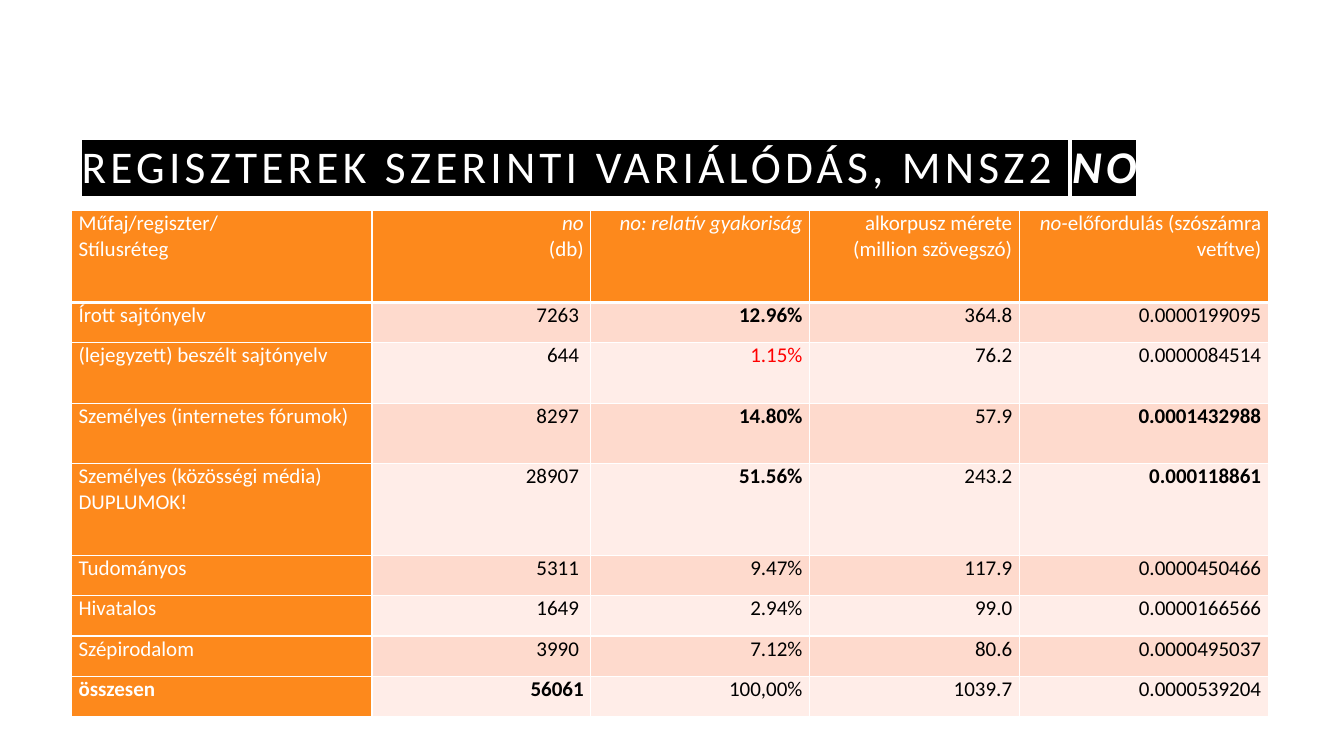
from lxml import etree
from pptx import Presentation
from pptx.dml.color import RGBColor
from pptx.enum.text import MSO_ANCHOR, MSO_AUTO_SIZE, PP_ALIGN
from pptx.oxml.ns import qn
from pptx.util import Pt

PX = 9144
FONT = "Calibri"
WHITE = RGBColor(0xFF, 0xFF, 0xFF)
BLACK = RGBColor(0x00, 0x00, 0x00)
RED = RGBColor(0xFF, 0x00, 0x00)
ORANGE = RGBColor(0xFD, 0x89, 0x1C)
BANDS = RGBColor(0xFF, 0xED, 0xE8), RGBColor(0xFE, 0xDA, 0xCD)
LEFT, RIGHT = PP_ALIGN.LEFT, PP_ALIGN.RIGHT
BOTTOM, NO_FIT = MSO_ANCHOR.BOTTOM, MSO_AUTO_SIZE.NONE
NBSP = chr(160)

TITLE_BOX = 71, 71, 1162, 125
TABLE_BOX = 71, 209, 1187, 502
COLS = 298, 217, 217, 208, 247
ROWS = 91, 40, 60, 60, 91, 40, 40, 40, 40
DATA = [
    ["Műfaj/regiszter/\nStílusréteg", "*no*\n(db)", "*no: relatív gyakoriság*",
     "alkorpusz mérete (million szövegszó)",
     "*no-*előfordulás (szószámra vetítve)"],
    ["Írott sajtónyelv", "7263" + NBSP, "12.96%", "364.8", "0.0000199095"],
    ["(lejegyzett) beszélt sajtónyelv", "644" + NBSP, "1.15%", "76.2", "0.0000084514"],
    ["Személyes (internetes fórumok)", "8297" + NBSP, "14.80%", "57.9", "0.0001432988"],
    ["Személyes (közösségi média) DUPLUMOK!", "28907" + NBSP, "51.56%", "243.2",
     "0.000118861"],
    ["Tudományos", "5311" + NBSP, "9.47%", "117.9", "0.0000450466"],
    ["Hivatalos", "1649" + NBSP, "2.94%", "99.0", "0.0000166566"],
    ["Szépirodalom", "3990" + NBSP, "7.12%", "80.6", "0.0000495037"],
    ["összesen", "56061", "100,00%", "1039.7", "0.0000539204"],
]
BOLD_CELLS = {(1, 2), (3, 2), (3, 4), (4, 2), (4, 4), (8, 0), (8, 1)}
RED_CELLS = {(2, 2)}


def set_attrs(obj, values):
    """Set each attribute named in a dict of values."""
    for name, value in values.items():
        setattr(obj, name, value)


def add_run(p, text, size, color, bold=False, italic=False):
    """Add a formatted run to a paragraph and return it."""
    r = p.add_run()
    r.text = text
    set_attrs(r.font, {"name": FONT, "size": Pt(size), "bold": bold, "italic": italic})
    r.font.color.rgb = color
    return r


def add_color(parent, color):
    """Add an RGB colour element to an XML parent."""
    etree.SubElement(parent, qn("a:srgbClr"), val=str(color))


def highlight(r, color):
    """Space out a run and put a highlight colour behind it."""
    rPr = r.font._element
    rPr.set("spc", "300")
    mark = etree.Element(qn("a:highlight"))
    add_color(mark, color)
    rPr.find(qn("a:solidFill")).addnext(mark)


def add_borders(cell, bottom):
    """Draw white borders round a cell."""
    tcPr = cell._tc.get_or_add_tcPr()
    for i, (side, width) in enumerate(zip("LRTB", (1, 1, 1, bottom))):
        ln = etree.Element(qn("a:ln" + side), w=str(Pt(width)))
        add_color(etree.SubElement(ln, qn("a:solidFill")), WHITE)
        tcPr.insert(i, ln)


def add_title(s, box):
    """Place the highlighted title in its placeholder."""
    sp = s.shapes.title
    set_attrs(sp, dict(zip(("left", "top", "width", "height"), (v * PX for v in box))))
    tf = sp.text_frame
    set_attrs(tf, {"word_wrap": True, "auto_size": NO_FIT, "vertical_anchor": BOTTOM})
    p = tf.paragraphs[0]
    set_attrs(p, {"alignment": LEFT, "line_spacing": 1.2})
    for text, strong in (("REGISZTEREK SZERINTI VARIÁLÓDÁS, MNSZ2 ", False), ("NO", True)):
        highlight(add_run(p, text, 32.4, WHITE, strong, strong), BLACK)


def fill_cell(cell, text, row, col):
    """Write and format one cell; asterisks enclose italics."""
    set_attrs(cell, {"margin_left": 7 * PX, "margin_right": 7 * PX,
                     "margin_top": 0, "margin_bottom": 0})
    heading = row == 0 or col == 0
    cell.fill.solid()
    cell.fill.fore_color.rgb = ORANGE if heading else BANDS[row % 2]
    color = WHITE if heading else RED if (row, col) in RED_CELLS else BLACK
    tf = cell.text_frame
    for i, line in enumerate(text.split("\n")):
        p = tf.add_paragraph() if i else tf.paragraphs[0]
        p.alignment = RIGHT if col else LEFT
        for j, part in enumerate(line.split("*")):
            if part:
                add_run(p, part, 15, color, (row, col) in BOLD_CELLS, j % 2 == 1)
    add_borders(cell, 1 if row else 3)


def add_register_table(s, box):
    """Place the table of registers in the given box."""
    table = s.shapes.add_table(len(ROWS), len(COLS), *(v * PX for v in box)).table
    for column, width in zip(table.columns, COLS):
        column.width = width * PX
    for row, height in enumerate(ROWS):
        table.rows[row].height = height * PX
        for col, text in enumerate(DATA[row]):
            fill_cell(table.cell(row, col), text, row, col)


def main():
    """Build and save the slide."""
    prs = Presentation()
    set_attrs(prs, {"slide_width": 1333 * PX, "slide_height": 750 * PX})
    s = prs.slides.add_slide(prs.slide_layouts[5])
    add_title(s, TITLE_BOX)
    add_register_table(s, TABLE_BOX)
    prs.save("out.pptx")


if __name__ == "__main__":
    main()
